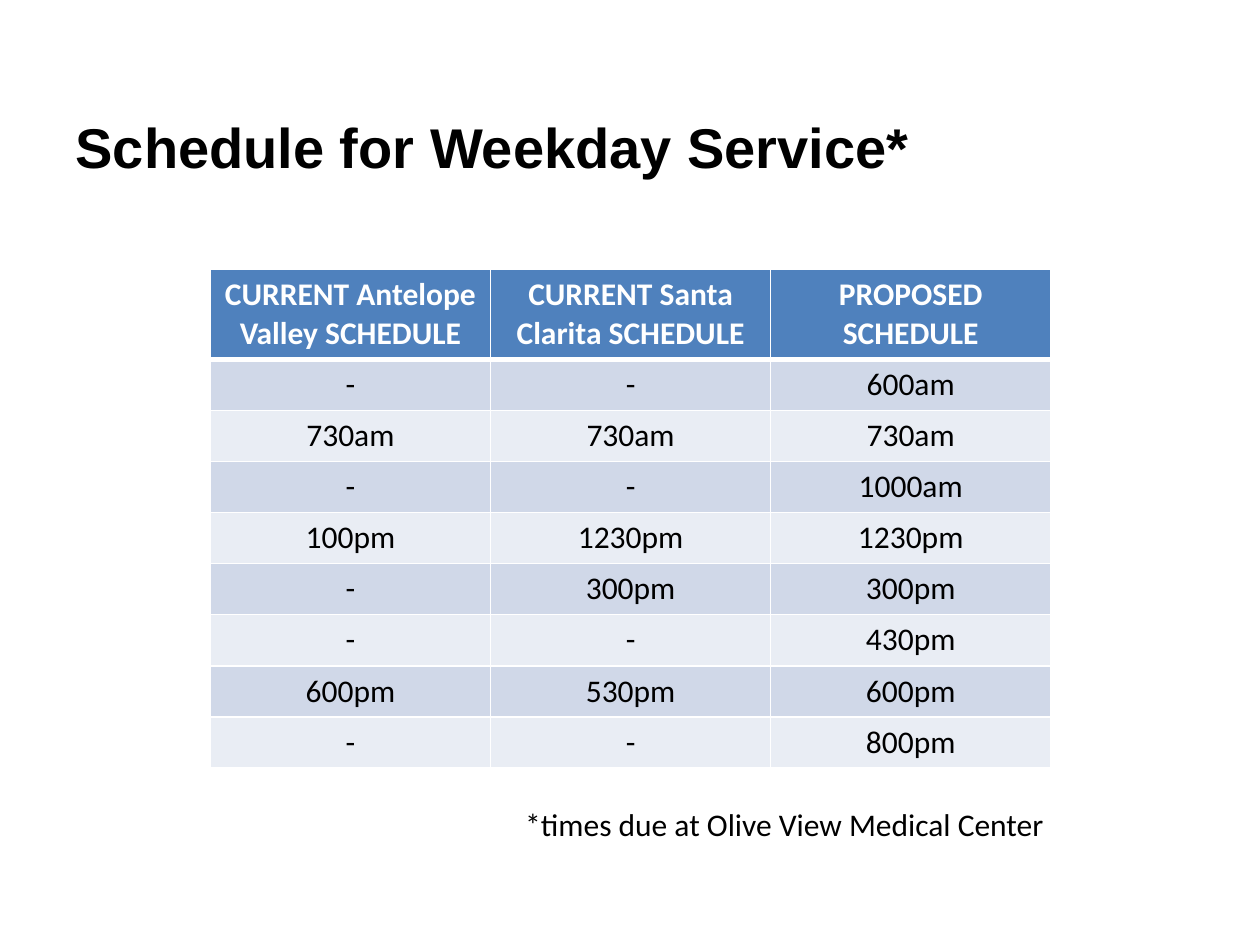
from lxml import etree
from pptx import Presentation
from pptx.dml.color import RGBColor
from pptx.enum.text import MSO_ANCHOR, MSO_AUTO_SIZE, PP_ALIGN
from pptx.oxml.ns import qn
from pptx.util import Inches, Pt

COLORS = {
    "text": "000000",
    "white": "FFFFFF",
    "header": "4F81BD",
    "band_dark": "D0D8E8",
    "band_light": "E9EDF4",
}

HEADINGS = [
    "CURRENT Antelope Valley SCHEDULE",
    "CURRENT Santa Clarita SCHEDULE",
    "PROPOSED SCHEDULE",
]
TIMES = [
    ("-", "-", "600am"),
    ("730am", "730am", "730am"),
    ("-", "-", "1000am"),
    ("100pm", "1230pm", "1230pm"),
    ("-", "300pm", "300pm"),
    ("-", "-", "430pm"),
    ("600pm", "530pm", "600pm"),
    ("-", "-", "800pm"),
]


def rgb(name):
    return RGBColor.from_string(COLORS[name])


def add_text(paragraph, wording, size, font="Calibri", color="text",
             bold=False, align=PP_ALIGN.LEFT):
    paragraph.alignment = align
    run = paragraph.add_run()
    run.text = wording
    run.font.name = font
    run.font.size = Pt(size)
    run.font.bold = bold
    run.font.color.rgb = rgb(color)


def set_borders(cell, widths):
    """Draw white cell borders; widths maps each side to points."""
    properties = cell._tc.get_or_add_tcPr()
    for side in ("L", "R", "T", "B"):
        line = etree.SubElement(properties, qn(f"a:ln{side}"),
                                w=str(Pt(widths[side])))
        fill = etree.SubElement(line, qn("a:solidFill"))
        etree.SubElement(fill, qn("a:srgbClr"), val=COLORS["white"])


def add_title(slide, left, top, width, height):
    title = slide.shapes.title
    title.left, title.top = Inches(left), Inches(top)
    title.width, title.height = Inches(width), Inches(height)
    frame = title.text_frame
    frame.word_wrap = True
    frame.auto_size = MSO_AUTO_SIZE.NONE
    frame.vertical_anchor = MSO_ANCHOR.MIDDLE
    add_text(frame.paragraphs[0], "Schedule for Weekday Service*", 32,
             font="Arial", bold=True)


def add_schedule(slide, left, top, width, height, header_height=0.7):
    rows = [HEADINGS, *TIMES]
    table = slide.shapes.add_table(
        len(rows), len(HEADINGS), Inches(left), Inches(top),
        Inches(width), Inches(height)).table
    for column in table.columns:
        column.width = Inches(width / len(HEADINGS))

    body_height = (height - header_height) / len(TIMES)
    for r, entries in enumerate(rows):
        is_header = r == 0
        table.rows[r].height = Inches(header_height if is_header else body_height)
        band = "header" if is_header else ("band_light", "band_dark")[r % 2]
        widths = {"L": 1, "R": 1, "T": 3 if r == 1 else 1,
                  "B": 3 if is_header else 1}
        for c, entry in enumerate(entries):
            cell = table.cell(r, c)
            set_borders(cell, widths)
            cell.fill.solid()
            cell.fill.fore_color.rgb = rgb(band)
            add_text(cell.text_frame.paragraphs[0], entry, 18,
                     color="white" if is_header else "text",
                     bold=is_header, align=PP_ALIGN.CENTER)


def add_footnote(slide, left, top, width, height):
    footnote = slide.shapes.add_textbox(Inches(left), Inches(top),
                                        Inches(width), Inches(height))
    frame = footnote.text_frame
    frame.word_wrap = False
    frame.auto_size = MSO_AUTO_SIZE.SHAPE_TO_FIT_TEXT
    add_text(frame.paragraphs[0], "*times due at Olive View Medical Center", 18)


def main():
    presentation = Presentation()
    presentation.slide_width = Inches(10)
    presentation.slide_height = Inches(7.5)
    slide = presentation.slides.add_slide(presentation.slide_layouts[5])
    slide.background.fill.solid()
    slide.background.fill.fore_color.rgb = rgb("white")

    # Title, timetable, note below it
    add_title(slide, 0.5, 0.84, 8.39, 0.64)
    add_schedule(slide, 1.67, 2.14, 6.67, 3.94)
    add_footnote(slide, 4.07, 6.34, 4.39, 0.4)
    presentation.save("out.pptx")


if __name__ == "__main__":
    main()
